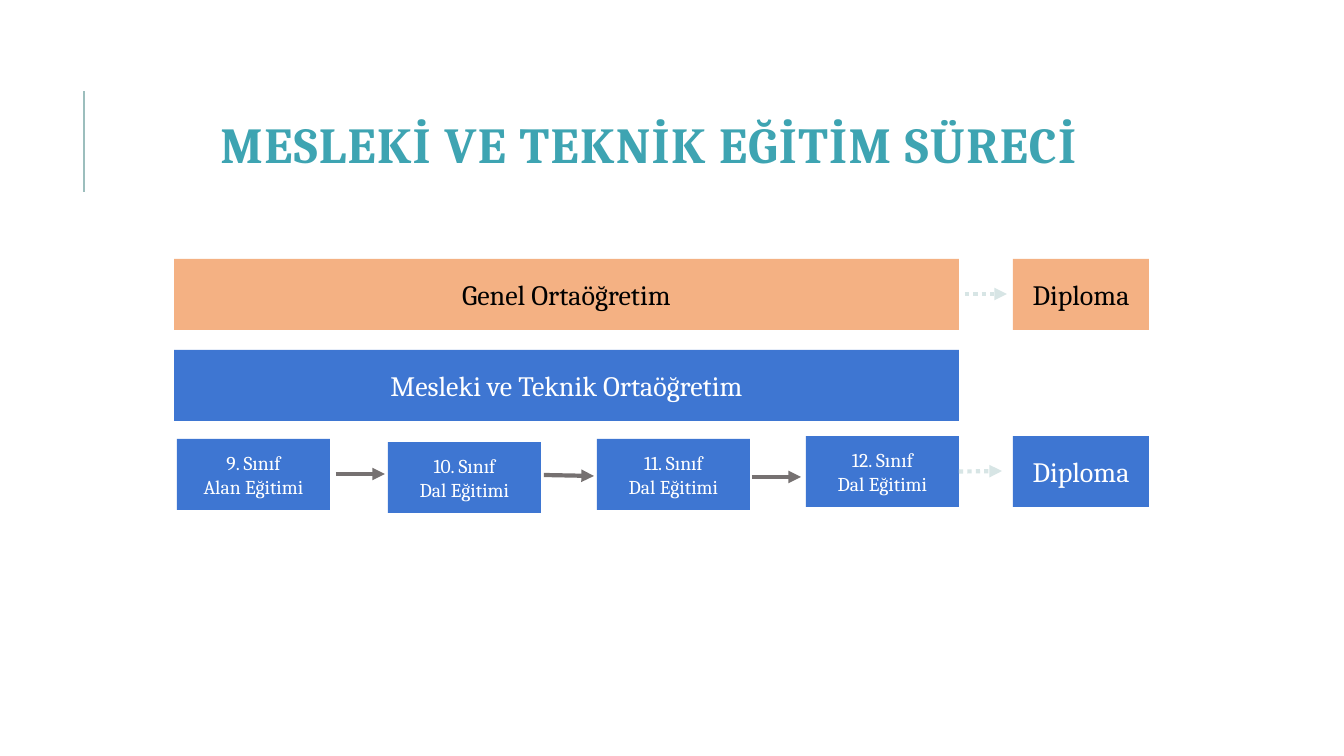
"""Build the slide on the stages of vocational and technical education."""
import pptx
import pptx.dml.color
import pptx.enum.dml
import pptx.enum.shapes
import pptx.enum.text
import pptx.oxml
import pptx.oxml.ns
import pptx.util

SCALE = 914400 / 100.8
FONT = "Cambria"
COLORS = {
    "teal": "3EA4B2", "rule": "9CBEBD", "peach": "F4B183", "blue": "3E76D2",
    "pale": "D7E5E5", "gray": "767171", "black": "000000", "white": "FFFFFF",
}
TITLE = "MESLEKİ VE TEKNİK EĞİTİM SÜRECİ"
TITLE_BOX = (113, 65, 1072, 165)
BAR_X, BAR_W, BOX_H = 174, 785, 71
DIP_X, DIP_W = 1013, 136
GRADE_W = 153
BARS = [
    ("Genel Ortaöğretim", 259, "peach", "black"),
    ("Mesleki ve Teknik Ortaöğretim", 350, "blue", "white"),
]
DIPLOMAS = [(259, "peach", "black"), (436, "blue", "white")]
GRADES = [
    ("9. Sınıf", "Alan Eğitimi", 177, 439),
    ("10. Sınıf", "Dal Eğitimi", 388, 442),
    ("11. Sınıf", "Dal Eğitimi", 597, 439),
    ("12. Sınıf", "Dal Eğitimi", 806, 436),
]
STEPS = [(336, 474, 385, 474), (544, 475, 594, 476), (752, 477, 801, 477)]
TO_DIPLOMA = [(965, 294, 1007, 294), (959, 471, 1002, 471)]


def px(num):
    return pptx.util.Emu(round(num * SCALE))


def rgb(name):
    return pptx.dml.color.RGBColor.from_string(COLORS[name])


def write(frame, lines, size, color, bold=False, gap=None, lead=None):
    frame.word_wrap = True
    frame.vertical_anchor = pptx.enum.text.MSO_ANCHOR.MIDDLE
    for i, line in enumerate(lines):
        para = frame.paragraphs[0] if i == 0 else frame.add_paragraph()
        para.alignment = pptx.enum.text.PP_ALIGN.CENTER
        if lead:
            para.line_spacing = lead
        run = para.add_run()
        run.text = line
        font = run.font
        font.name, font.size, font.bold = FONT, pptx.util.Pt(size), bold
        font.color.rgb = rgb(color)
        if gap:
            font._element.set("spc", str(gap * 100))


def box(slide, place, lines, size, fill, color):
    shape = slide.shapes.add_shape(
        pptx.enum.shapes.MSO_SHAPE.RECTANGLE, *map(px, place))
    shape.shadow.inherit = False
    shape.fill.solid()
    shape.fill.fore_color.rgb = rgb(fill)
    shape.line.fill.background()
    write(shape.text_frame, lines, size, color)
    return shape


def rule(slide, ends, color, width, head=True, dots=False):
    link = slide.shapes.add_connector(
        pptx.enum.shapes.MSO_CONNECTOR.STRAIGHT, *map(px, ends))
    link.line.color.rgb = rgb(color)
    link.line.width = pptx.util.Pt(width)
    if dots:
        link.line.dash_style = pptx.enum.dml.MSO_LINE.ROUND_DOT
    props = link._element.spPr
    if head:
        tail = pptx.oxml.parse_xml(
            f'<a:tailEnd {pptx.oxml.ns.nsdecls("a")} type="triangle"/>')
        link.line._get_or_add_ln().append(tail)
    props.append(pptx.oxml.parse_xml(
        f'<a:effectLst {pptx.oxml.ns.nsdecls("a")}/>'))
    return link


def main():
    deck = pptx.Presentation()
    deck.slide_width, deck.slide_height = px(1344), px(756)
    slide = deck.slides.add_slide(deck.slide_layouts.get_by_name("Title Only"))

    rule(slide, (84, 192, 84, 91), "rule", 1.5, head=False)
    title = slide.shapes.title
    title.left, title.top, title.width, title.height = map(px, TITLE_BOX)
    write(title.text_frame, [TITLE], 36, "teal", bold=True, gap=1, lead=0.9)

    for text, top, fill, color in BARS:
        box(slide, (BAR_X, top, BAR_W, BOX_H), [text], 20, fill, color)
    for top, fill, color in DIPLOMAS:
        box(slide, (DIP_X, top, DIP_W, BOX_H), ["Diploma"], 20, fill, color)
    for grade, kind, left, top in GRADES:
        last = box(slide, (left, top, GRADE_W, BOX_H), [grade, kind], 14,
                   "blue", "white")
    for ends in STEPS:
        rule(slide, ends, "gray", 3)
    for ends in TO_DIPLOMA:
        link = rule(slide, ends, "pale", 3, dots=True)
    link.begin_connect(last, 3)

    deck.save("out.pptx")


if __name__ == "__main__":
    main()
